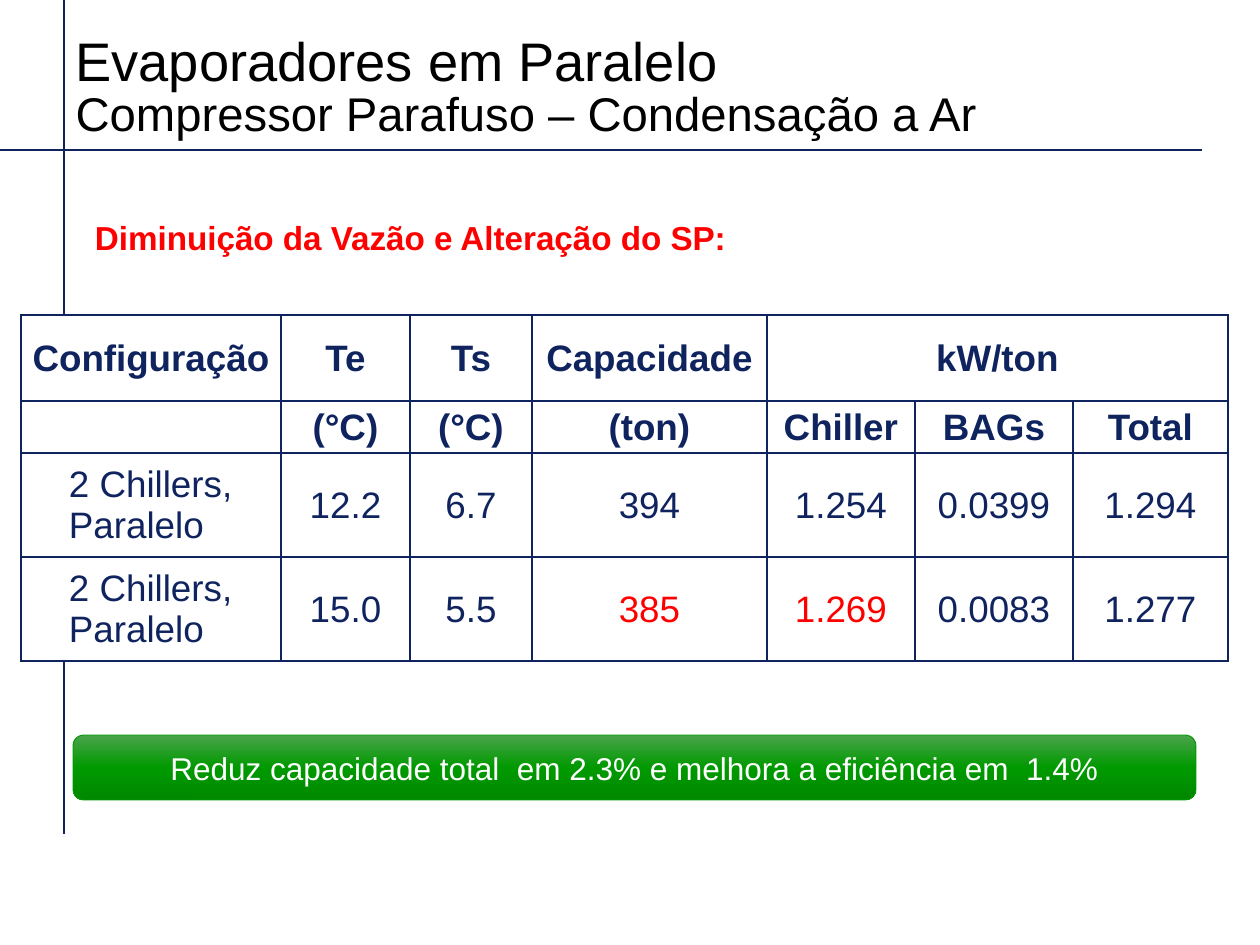
from lxml import etree
from pptx import Presentation
from pptx.dml.color import RGBColor
from pptx.enum.shapes import MSO_CONNECTOR, MSO_SHAPE
from pptx.enum.text import MSO_ANCHOR, MSO_AUTO_SIZE, PP_ALIGN
from pptx.oxml import parse_xml
from pptx.oxml.ns import nsdecls, qn
from pptx.util import Pt

LEFT, CENTER = PP_ALIGN.LEFT, PP_ALIGN.CENTER
MIDDLE, BOTTOM = MSO_ANCHOR.MIDDLE, MSO_ANCHOR.BOTTOM
STRAIGHT, ROUNDED = MSO_CONNECTOR.STRAIGHT, MSO_SHAPE.ROUNDED_RECTANGLE
NO_FIT = MSO_AUTO_SIZE.NONE
TITLE_ONLY = 5

EMU_PER_PX = 914400 / 126
NAVY, RED, BLACK, WHITE, GREEN = "0F245F", "FF0000", "000000", "FFFFFF", "009900"
GRADIENT = [(0, "4BA44B"), (50, GREEN), (100, "008800")]

COLUMNS = [260, 129, 122, 235, 148, 158, 155]
ROWS = [86, 52, 104, 104]
HEADER_ROWS = 2
DATA = [
    ["Configuração", "Te", "Ts", "Capacidade", "kW/ton", "", ""],
    ["", "(°C)", "(°C)", "(ton)", "Chiller", "BAGs", "Total"],
    ["2 Chillers, Paralelo", "12.2", "6.7", "394", "1.254", "0.0399", "1.294"],
    ["2 Chillers, Paralelo", "15.0", "5.5", "385", "1.269", "0.0083", "1.277"],
]
HIGHLIGHTED = {(3, 3), (3, 4)}


def px(value):
    return round(value * EMU_PER_PX)


def color(value):
    return RGBColor.from_string(value)


def set_attrs(obj, values):
    for name, value in values.items():
        setattr(obj, name, value)


def add_run(p, text, size, fill, bold=False):
    r = p.add_run()
    r.text = text
    set_attrs(r.font, {"name": "Arial", "size": Pt(size), "bold": bold})
    r.font.color.rgb = color(fill)


def add_rule(slide, *ends):
    line = slide.shapes.add_connector(STRAIGHT, *map(px, ends))
    line.line.color.rgb = color(NAVY)
    line.line.width = Pt(0.75)
    etree.SubElement(line._element.spPr, qn("a:effectLst"))


def set_title(slide, title, subtitle):
    sp = slide.shapes.title
    set_attrs(sp, {"left": px(63), "top": px(21), "width": px(949), "height": px(126)})
    tf = sp.text_frame
    set_attrs(tf, {"vertical_anchor": BOTTOM, "auto_size": NO_FIT, "word_wrap": True})
    p = tf.paragraphs[0]
    set_attrs(p, {"alignment": LEFT, "line_spacing": 0.85})
    add_run(p, title, 31, BLACK)
    p.add_line_break()
    add_run(p, subtitle, 27, BLACK)


def add_heading(slide, text):
    sp = slide.shapes.add_textbox(px(95), px(217), px(1080), px(40))
    tf = sp.text_frame
    set_attrs(tf, {"word_wrap": True, "margin_left": 0, "margin_top": 0,
                   "margin_right": 0, "margin_bottom": 0})
    add_run(tf.paragraphs[0], text, 19, RED, bold=True)


def add_borders(cell):
    tc_pr = cell._tc.get_or_add_tcPr()
    for side in ("lnL", "lnR", "lnT", "lnB"):
        tc_pr.append(parse_xml(
            f'<a:{side} {nsdecls("a")} w="{Pt(1)}"><a:solidFill>'
            f'<a:srgbClr val="{NAVY}"/></a:solidFill></a:{side}>'))


def format_cell(cell, text, fill, bold, is_label):
    set_attrs(cell, {"vertical_anchor": MIDDLE, "margin_left": px(48 if is_label else 1),
                     "margin_top": px(1), "margin_right": px(1), "margin_bottom": 0})
    add_borders(cell)
    cell.fill.solid()
    cell.fill.fore_color.rgb = color(WHITE)
    if text:
        p = cell.text_frame.paragraphs[0]
        p.alignment = LEFT if is_label else CENTER
        add_run(p, text, 21, fill, bold)


def add_results_table(slide):
    frame = slide.shapes.add_table(len(ROWS), len(COLUMNS), px(21), px(315),
                                   px(sum(COLUMNS)), px(sum(ROWS)))
    table = frame.table
    set_attrs(table, {"first_row": False, "horz_banding": False})
    for column, width in zip(table.columns, COLUMNS):
        column.width = px(width)
    for row, height in zip(table.rows, ROWS):
        row.height = px(height)
    table.cell(0, 4).merge(table.cell(0, 6))
    for i, texts in enumerate(DATA):
        for j, text in enumerate(texts):
            is_header = i < HEADER_ROWS
            fill = RED if (i, j) in HIGHLIGHTED else NAVY
            format_cell(table.cell(i, j), text, fill, is_header, j == 0 and not is_header)


def set_gradient(sp, stops):
    """Fill a shape from top to bottom with any number of colour stops."""
    sp.fill.gradient()
    sp.fill.gradient_angle = 270
    gs_list = sp._element.spPr.find(qn("a:gradFill")).find(qn("a:gsLst"))
    gs_list.clear()
    for percent, value in stops:
        gs = etree.SubElement(gs_list, qn("a:gs"), pos=str(percent * 1000))
        etree.SubElement(gs, qn("a:srgbClr"), val=value)


def add_conclusion(slide, text):
    sp = slide.shapes.add_shape(ROUNDED, px(73), px(735), px(1123), px(65))
    sp.shadow.inherit = False
    set_gradient(sp, GRADIENT)
    sp.line.color.rgb = color(GREEN)
    sp.line.width = Pt(0.5)
    tf = sp.text_frame
    set_attrs(tf, {"vertical_anchor": MIDDLE, "word_wrap": True})
    p = tf.paragraphs[0]
    p.alignment = CENTER
    add_run(p, text, 18, WHITE)


def main():
    prs = Presentation()
    set_attrs(prs, {"slide_width": px(1260), "slide_height": px(945)})
    slide = prs.slides.add_slide(prs.slide_layouts[TITLE_ONLY])
    add_rule(slide, 64, 834, 64, 0)
    add_rule(slide, 0, 150, 1202, 150)
    set_title(slide, "Evaporadores em Paralelo", "Compressor Parafuso – Condensação a Ar")
    add_results_table(slide)
    add_conclusion(slide, "Reduz capacidade total  em 2.3% e melhora a eficiência em  1.4%")
    add_heading(slide, "Diminuição da Vazão e Alteração do SP:")
    prs.save("out.pptx")


if __name__ == "__main__":
    main()
